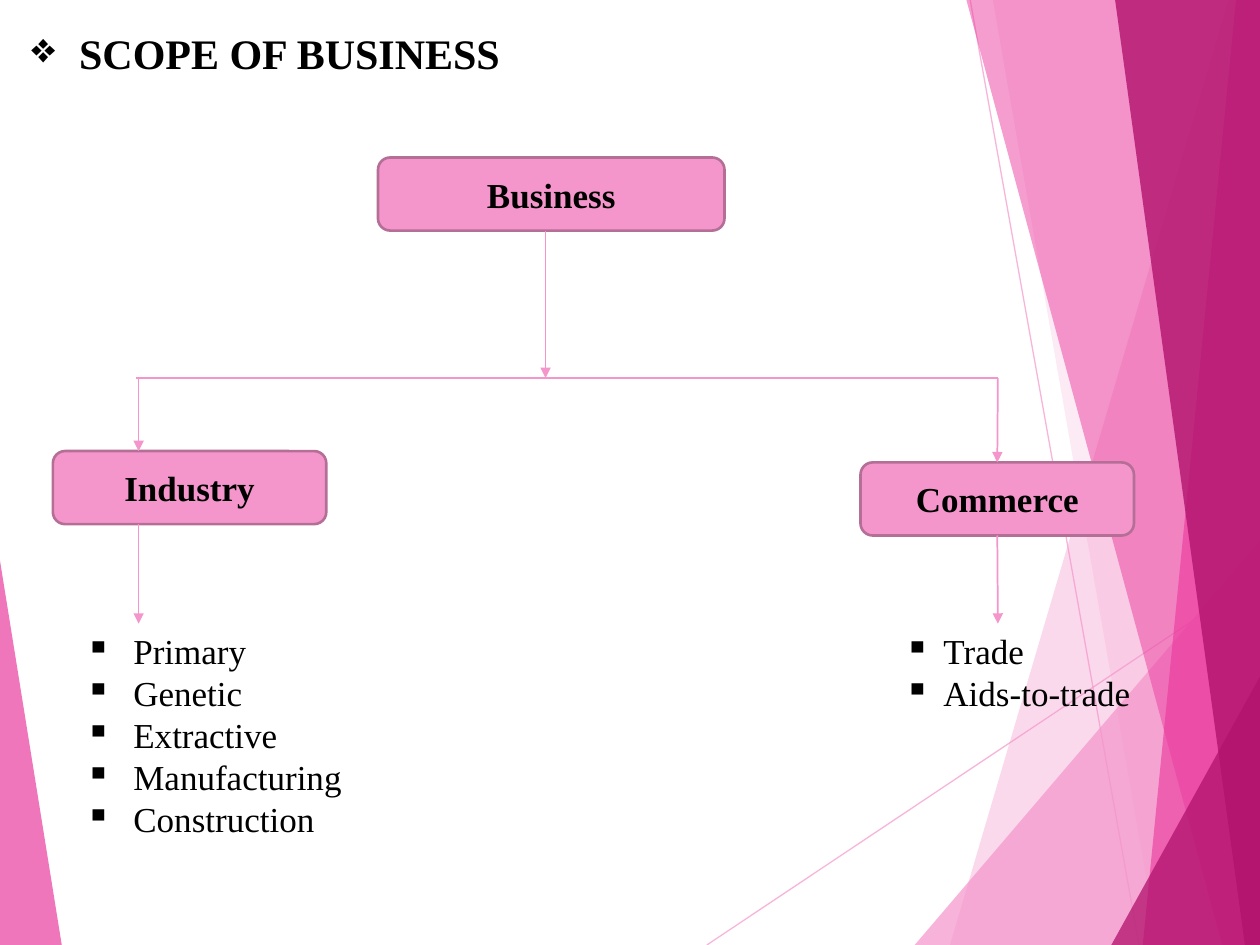
from typing import NamedTuple

from pptx import Presentation
from pptx.dml.color import RGBColor
from pptx.enum.shapes import MSO_CONNECTOR, MSO_SHAPE
from pptx.enum.text import MSO_ANCHOR, PP_ALIGN
from pptx.oxml.ns import qn
from pptx.util import Inches, Pt

STRAIGHT = MSO_CONNECTOR.STRAIGHT
ROUND = MSO_SHAPE.ROUNDED_RECTANGLE
CENTER = PP_ALIGN.CENTER
MIDDLE = MSO_ANCHOR.MIDDLE
TOP, BOTTOM = 0, 2

FONT = "Times New Roman"
COLORS = {"pink": "F496CB", "rose": "EB3D9F", "plum": "B2136D",
          "edge": "B56F96", "ink": "000000"}
WIDE, HIGH = 10, 7.5


class Facet(NamedTuple):
    color: str
    alpha: int
    points: list


class Box(NamedTuple):
    text: str
    left: float
    top: float
    width: float


class Bullets(NamedTuple):
    items: list
    mark: str
    indent: float
    place: tuple
    size: int = 20
    bold: bool = False


class Line(NamedTuple):
    start: tuple
    end: tuple
    arrow: bool = False
    weight: float = 1
    alpha: int = 100


FACETS = [
    Facet("pink", 36, [(9.75, 0), (7.54, HIGH), (WIDE, HIGH), (WIDE, 0)]),
    Facet("pink", 20, [(7.88, 0), (9.19, HIGH), (WIDE, HIGH), (WIDE, 0)]),
    Facet("pink", 72, [(7.26, HIGH), (WIDE, 4.29), (WIDE, HIGH)]),
    Facet("rose", 50, [(7.67, 0), (9.7, HIGH), (WIDE, HIGH), (WIDE, 0)]),
    Facet("rose", 66, [(9.81, 0), (9.07, HIGH), (WIDE, HIGH), (WIDE, 0)]),
    Facet("plum", 80, [(8.85, 0), (9.88, HIGH), (WIDE, HIGH), (WIDE, 0)]),
    Facet("plum", 76, [(8.82, HIGH), (WIDE, 5.37), (WIDE, HIGH)]),
    Facet("rose", 70, [(0, 4.45), (0.49, HIGH), (0, HIGH)]),
]
RAYS = [Line((5.61, HIGH), (WIDE, 4.57), weight=0.75, alpha=70),
        Line((7.7, 0), (9.04, HIGH), weight=0.75, alpha=70)]

BOX_HIGH = 0.58
BUSINESS = Box("Business", 3, 1.25, 2.75)
INDUSTRY = Box("Industry", 0.42, 3.58, 2.17)
COMMERCE = Box("Commerce", 6.83, 3.67, 2.17)

BAR, FOOT = 3, 4.95
STEM, LEFT, RIGHT = 4.33, 1.1, 7.92
LINES = [
    Line((STEM, BUSINESS.top + BOX_HIGH), (STEM, BAR), True),
    Line((1.08, BAR), (RIGHT, BAR)),
    Line((LEFT, BAR), (LEFT, INDUSTRY.top), True),
    Line((LEFT, INDUSTRY.top + BOX_HIGH), (LEFT, FOOT), True),
]
TO_TRADE = Line((RIGHT, BAR), (RIGHT, COMMERCE.top), True)
FROM_TRADE = Line((RIGHT, COMMERCE.top + BOX_HIGH), (RIGHT, FOOT), True)

LISTS = [
    Bullets(["SCOPE OF BUSINESS"], "❖", 0.38, (0.15, 0.17, 6.94, 1.44), 24, True),
    Bullets(["Primary", "Genetic", "Extractive", "Manufacturing", "Construction"],
            "▪", 0.38, (0.58, FOOT, 2.42, 1.78)),
    Bullets(["Trade", "Aids-to-trade"], "▪", 0.31, (7.08, FOOT, 2.17, 0.77)),
]


def shade(name: str) -> RGBColor:
    return RGBColor.from_string(COLORS[name])


def fade(shape, alpha: int) -> None:
    """Set the opacity, in percent, of every colour of a shape."""
    for color in shape._element.spPr.iter(qn("a:srgbClr")):
        tag = color.makeelement(qn("a:alpha"), {"val": str(alpha * 1000)})
        color.append(tag)


def add_run(para, text: str, size: int, bold: bool) -> None:
    run = para.add_run()
    run.text = text
    run.font.name = FONT
    run.font.size = Pt(size)
    run.font.bold = bold
    run.font.color.rgb = shade("ink")


def draw_facet(shapes, facet: Facet) -> None:
    points = [(Inches(x), Inches(y)) for x, y in facet.points]
    form = shapes.build_freeform(*points[0])
    form.add_line_segments(points[1:], close=True)
    shape = form.convert_to_shape()
    shape.shadow.inherit = False
    shape.fill.solid()
    shape.fill.fore_color.rgb = shade(facet.color)
    shape.line.fill.background()
    fade(shape, facet.alpha)


def draw_line(shapes, line: Line):
    ends = [Inches(v) for v in line.start + line.end]
    link = shapes.add_connector(STRAIGHT, *ends)
    link.line.color.rgb = shade("pink")
    link.line.width = Pt(line.weight)
    if line.alpha < 100:
        fade(link, line.alpha)
    if line.arrow:
        stroke = link.line._get_or_add_ln()
        stroke.append(stroke.makeelement(qn("a:tailEnd"), {"type": "triangle"}))
    props = link._element.spPr
    props.append(props.makeelement(qn("a:effectLst"), {}))
    return link


def draw_box(shapes, box: Box):
    place = (box.left, box.top, box.width, BOX_HIGH)
    shape = shapes.add_shape(ROUND, *(Inches(v) for v in place))
    shape.shadow.inherit = False
    shape.fill.solid()
    shape.fill.fore_color.rgb = shade("pink")
    shape.line.color.rgb = shade("edge")
    shape.line.width = Pt(1.5)
    frame = shape.text_frame
    frame.vertical_anchor = MIDDLE
    para = frame.paragraphs[0]
    para.alignment = CENTER
    add_run(para, box.text, 20, True)
    return shape


def draw_list(shapes, block: Bullets) -> None:
    frame = shapes.add_textbox(*(Inches(v) for v in block.place)).text_frame
    frame.word_wrap = True
    for i, item in enumerate(block.items):
        para = frame.add_paragraph() if i else frame.paragraphs[0]
        props = para._p.get_or_add_pPr()
        props.set("marL", str(Inches(block.indent)))
        props.set("indent", str(-Inches(block.indent)))
        props.append(props.makeelement(qn("a:buChar"), {"char": block.mark}))
        add_run(para, item, block.size, block.bold)


def main() -> None:
    deck = Presentation()
    deck.slide_width, deck.slide_height = Inches(WIDE), Inches(HIGH)
    shapes = deck.slides.add_slide(deck.slide_layouts[6]).shapes
    for ray in RAYS:
        draw_line(shapes, ray)
    for facet in FACETS:
        draw_facet(shapes, facet)
    for box in (BUSINESS, INDUSTRY):
        draw_box(shapes, box)
    trade = draw_box(shapes, COMMERCE)
    for line in LINES:
        draw_line(shapes, line)
    draw_line(shapes, TO_TRADE).end_connect(trade, TOP)
    draw_line(shapes, FROM_TRADE).begin_connect(trade, BOTTOM)
    for block in LISTS:
        draw_list(shapes, block)
    deck.save("out.pptx")


if __name__ == "__main__":
    main()
